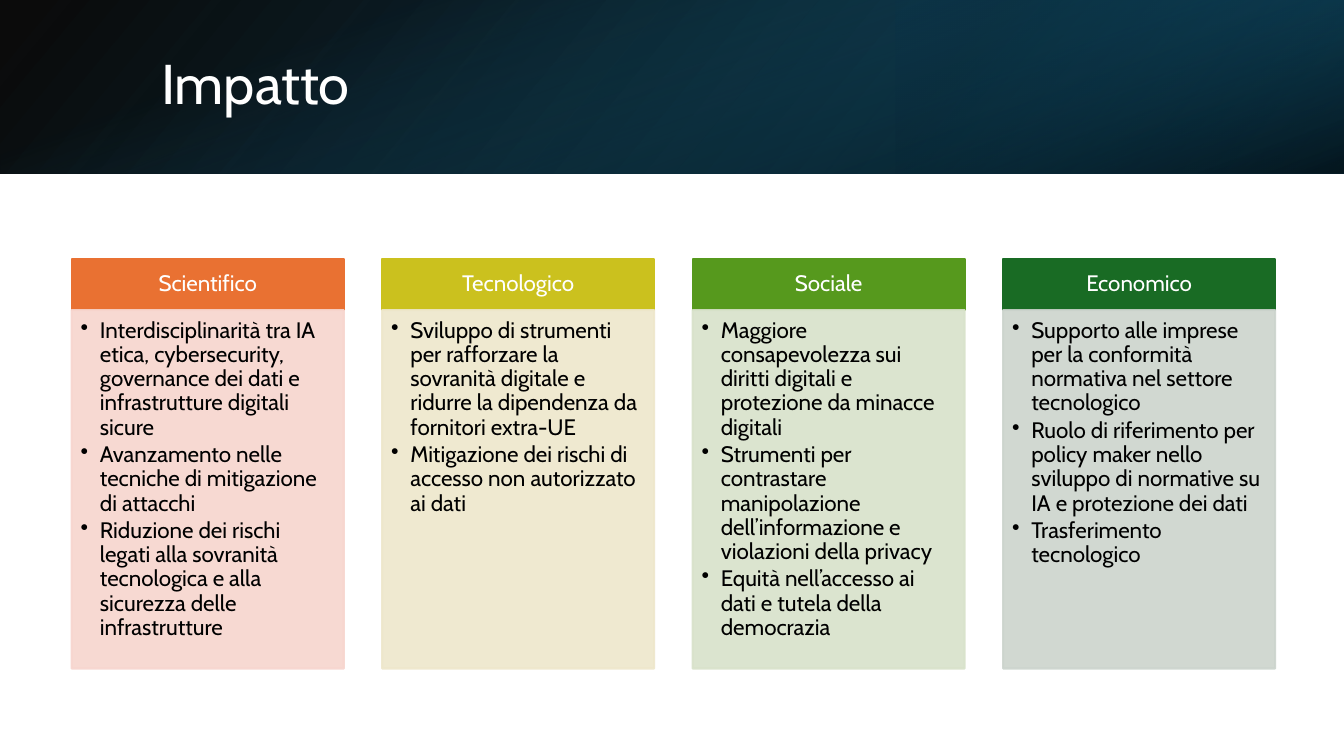
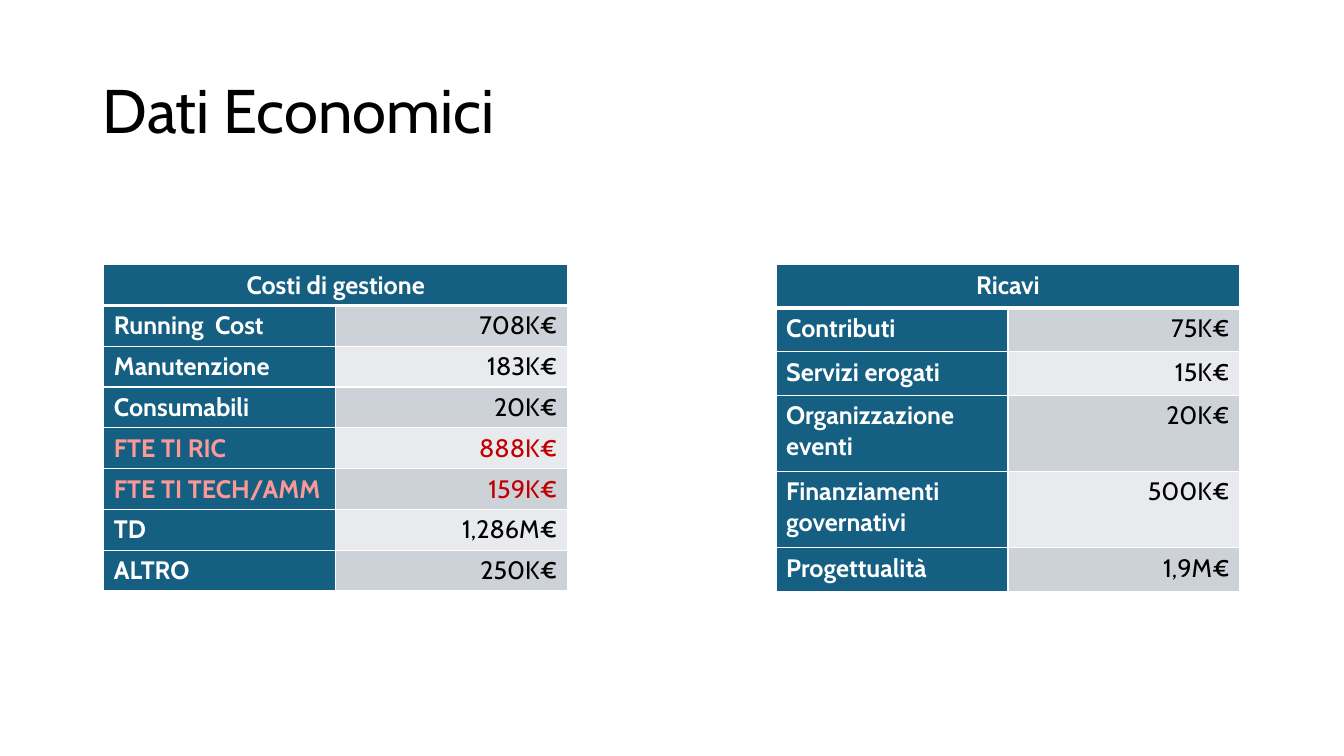
from dataclasses import dataclass

from lxml import etree
from pptx import Presentation
from pptx.dml.color import RGBColor
from pptx.enum.shapes import MSO_SHAPE
from pptx.enum.text import MSO_ANCHOR, PP_ALIGN
from pptx.oxml import parse_xml
from pptx.oxml.ns import nsdecls, qn
from pptx.util import Inches, Pt

RECTANGLE = MSO_SHAPE.RECTANGLE
TOP, MIDDLE = MSO_ANCHOR.TOP, MSO_ANCHOR.MIDDLE
LEFT, CENTER, RIGHT = PP_ALIGN.LEFT, PP_ALIGN.CENTER, PP_ALIGN.RIGHT


@dataclass(frozen=True)
class Theme:
    font: str = "Cabin"
    white: str = "FFFFFF"
    black: str = "000000"
    teal: str = "156082"
    row_fills: tuple = ("CCD2D8", "E8EAED")
    alert_label: str = "FC9898"
    alert_value: str = "C00000"
    banner_title: int = 40
    plain_title: int = 44
    panel_text: int = 16
    table_text: int = 18
    line_spacing: float = 0.9
    panel_alpha: int = 90


@dataclass(frozen=True)
class Box:
    """A region; share() takes percentages of its own size."""
    left: float
    top: float
    width: float
    height: float

    def share(self, left, top, width, height):
        return Box(self.left + self.width * left / 100,
                   self.top + self.height * top / 100,
                   self.width * width / 100, self.height * height / 100)

    def turned(self):
        return Box(self.left + (self.width - self.height) / 2,
                   self.top + (self.height - self.width) / 2,
                   self.height, self.width)

    def lengths(self):
        return [Inches(v) for v in (self.left, self.top, self.width, self.height)]


THEME = Theme()
PAGE = Box(0, 0, 13.33, 7.5)

# Banner layers: share of the banner, rotation, flip, angle, stops (position, colour, alpha)
BANNER_LAYERS = [
    ((0, 0, 100, 100), 0, True, 140, [(0, THEME.black, 96), (100, "104862", 100)]),
    ((66.67, 0, 33.33, 100), 180, True, 320, [(19, "0B3041", 68), (100, THEME.teal, 79)]),
    ((0, 0, 100, 100), 90, False, 340, [(23, THEME.teal, 0), (99, THEME.black, 74)]),
]

# Heading, heading colour, body colour, bullets
IMPACTS = [
    ("Scientifico", "E97132", "F7D5CE", [
        "Interdisciplinarità tra IA etica, cybersecurity, governance dei dati e "
        "infrastrutture digitali sicure",
        "Avanzamento nelle tecniche di mitigazione di attacchi",
        "Riduzione dei rischi legati alla sovranità tecnologica e alla sicurezza "
        "delle infrastrutture"]),
    ("Tecnologico", "CBC11E", "EEE7CB", [
        "Sviluppo di strumenti per rafforzare la sovranità digitale e ridurre la "
        "dipendenza da fornitori extra-UE",
        "Mitigazione dei rischi di accesso non autorizzato ai dati"]),
    ("Sociale", "56991D", "D8E2CA", [
        "Maggiore consapevolezza sui diritti digitali e protezione da minacce digitali",
        "Strumenti per contrastare manipolazione dell’informazione e violazioni "
        "della privacy",
        "Equità nell’accesso ai dati e tutela della democrazia"]),
    ("Economico", "196B24", "CCD4CD", [
        "Supporto alle imprese per la conformità normativa nel settore tecnologico",
        "Ruolo di riferimento per policy maker nello sviluppo di normative su IA e "
        "protezione dei dati",
        "Trasferimento tecnologico"]),
]

COSTS = [("Running  Cost", "708K€"), ("Manutenzione", "183K€"), ("Consumabili", "20K€"),
         ("FTE TI RIC", "888K€"), ("FTE TI TECH/AMM", "159K€"), ("TD", "1,286M€"),
         ("ALTRO", "250K€")]
REVENUES = [("Contributi", "75K€"), ("Servizi erogati", "15K€"),
            ("Organizzazione eventi", "20K€"), ("Finanziamenti governativi", "500K€"),
            ("Progettualità", "1,9M€")]


# Shared helpers
def write(frame, texts, size, color, bold=False, bullet=False, **paragraph_format):
    for index, text in enumerate(texts):
        paragraph = frame.paragraphs[0] if index == 0 else frame.add_paragraph()
        for name, value in paragraph_format.items():
            setattr(paragraph, name, value)
        run = paragraph.add_run()
        run.text = text
        font_format = {"name": THEME.font, "size": Pt(size), "bold": bold}
        for name, value in font_format.items():
            setattr(run.font, name, value)
        run.font.color.rgb = RGBColor.from_string(color)
        if bullet:
            properties = paragraph._p.get_or_add_pPr()
            indent = Inches(0.19)
            properties.set("marL", str(indent))
            properties.set("indent", str(-indent))
            etree.SubElement(properties, qn("a:buChar")).set("char", "•")


def set_frame(frame, anchor, insets):
    frame.word_wrap = True
    frame.vertical_anchor = anchor
    for side, inset in zip(("left", "top", "right", "bottom"), insets):
        setattr(frame, f"margin_{side}", Inches(inset))


def add_title(slide, box, text, size, color):
    frame = slide.shapes.add_textbox(*box.lengths()).text_frame
    set_frame(frame, MIDDLE, (0.1, 0.05, 0.1, 0.05))
    write(frame, [text], size, color, line_spacing=THEME.line_spacing)


def add_rectangle(slide, box):
    shape = slide.shapes.add_shape(RECTANGLE, *box.lengths())
    shape.shadow.inherit = False
    return shape


def add_block(slide, box, color, alpha=100):
    block = add_rectangle(slide, box)
    block.fill.solid()
    block.fill.fore_color.rgb = RGBColor.from_string(color)
    block.line.color.rgb = RGBColor.from_string(color)
    block.line.width = Pt(1.5)
    if alpha < 100:
        for node in block.element.spPr.iter(qn("a:srgbClr")):
            etree.SubElement(node, qn("a:alpha")).set("val", str(alpha * 1000))
    return block


# Banner with layered gradients
def add_banner(slide, box, title):
    for share, rotation, flipped, angle, stops in BANNER_LAYERS:
        area = box.share(*share)
        layer = add_rectangle(slide, area.turned() if rotation == 90 else area)
        layer.rotation = rotation
        if flipped:
            layer.element.spPr.xfrm.set("flipH", "1")
        stop_xml = "".join(
            f'<a:gs pos="{position * 1000}"><a:srgbClr val="{color}">'
            f'<a:alpha val="{alpha * 1000}"/></a:srgbClr></a:gs>'
            for position, color, alpha in stops)
        gradient = parse_xml(
            f'<a:gradFill {nsdecls("a")} rotWithShape="1"><a:gsLst>{stop_xml}</a:gsLst>'
            f'<a:lin ang="{angle * 60000}" scaled="0"/></a:gradFill>')
        layer.element.spPr.find(qn("a:prstGeom")).addnext(gradient)
        layer.line.fill.background()
    add_title(slide, box.share(11.25, 22.1, 82.35, 55.8), title,
              THEME.banner_title, THEME.white)


# Row of equal panels, each with a heading and bullets
def add_panels(slide, box, panels):
    width, heading_height = 22.61, 12.4
    step = (100 - width) / (len(panels) - 1)
    for index, (heading, color, tint, bullets) in enumerate(panels):
        column = box.share(index * step, 0, width, 100)
        head = add_block(slide, column.share(0, 0, 100, heading_height), color)
        set_frame(head.text_frame, MIDDLE, (0.12, 0.07, 0.12, 0.07))
        write(head.text_frame, [heading], THEME.panel_text, THEME.white,
              alignment=CENTER, line_spacing=THEME.line_spacing)
        body = add_block(slide, column.share(0, heading_height, 100, 100 - heading_height),
                         tint, THEME.panel_alpha)
        set_frame(body.text_frame, TOP, (0.09, 0.09, 0.12, 0.14))
        write(body.text_frame, bullets, THEME.panel_text, THEME.black, bullet=True,
              alignment=LEFT, line_spacing=THEME.line_spacing,
              space_after=Pt(THEME.panel_text * 0.15))


# Two-column table under a merged heading
def style_cell(cell, fill, thick_side=None):
    cell.fill.solid()
    cell.fill.fore_color.rgb = RGBColor.from_string(fill)
    properties = cell._tc.get_or_add_tcPr()
    for index, side in enumerate("LRTB"):
        width = Pt(3 if side == thick_side else 1)
        properties.insert(index, parse_xml(
            f'<a:ln{side} {nsdecls("a")} w="{width}"><a:solidFill>'
            f'<a:srgbClr val="{THEME.white}"/></a:solidFill></a:ln{side}>'))


def add_amounts(slide, box, heading, entries, weights):
    table = slide.shapes.add_table(len(weights), 2, *box.lengths()).table
    table.first_row = table.horz_banding = False
    for row, weight in zip(table.rows, weights):
        row.height = Inches(box.height * weight / sum(weights))
    for cell in table.rows[0].cells:
        style_cell(cell, THEME.teal, "B")
    table.cell(0, 0).merge(table.cell(0, 1))
    write(table.cell(0, 0).text_frame, [heading], THEME.table_text, THEME.white,
          bold=True, alignment=CENTER)
    for index, (label, amount) in enumerate(entries):
        alert = label.startswith("FTE")
        columns = [
            (label, THEME.teal, THEME.alert_label if alert else THEME.white, True, LEFT),
            (amount, THEME.row_fills[index % 2],
             THEME.alert_value if alert else THEME.black, False, RIGHT)]
        for column, (text, fill, color, bold, alignment) in enumerate(columns):
            cell = table.cell(index + 1, column)
            style_cell(cell, fill, "T" if index == 0 else None)
            write(cell.text_frame, [text], THEME.table_text, color,
                  bold=bold, alignment=alignment)


# Slides
def build_impact(slide):
    add_banner(slide, PAGE.share(0, 0, 100, 22.93), "Impatto")
    add_panels(slide, PAGE.share(5.33, 34.3, 89.55, 54.13), IMPACTS)


def build_finances(slide):
    add_title(slide, PAGE.share(6.9, 5.33, 86.25, 19.33), "Dati Economici",
              THEME.plain_title, THEME.black)
    tables = [(57.75, "Ricavi", REVENUES, [1, 1, 1, 1.75, 1.75, 1]),
              (7.73, "Costi di gestione", COSTS, [1] * 8)]
    for left, heading, entries, weights in tables:
        add_amounts(slide, PAGE.share(left, 35, 34.5, 43.2), heading, entries, weights)


def main():
    presentation = Presentation()
    presentation.slide_width = Inches(PAGE.width)
    presentation.slide_height = Inches(PAGE.height)
    blank = presentation.slide_layouts[6]
    for build in (build_impact, build_finances):
        build(presentation.slides.add_slide(blank))
    presentation.save("out.pptx")


if __name__ == "__main__":
    main()
